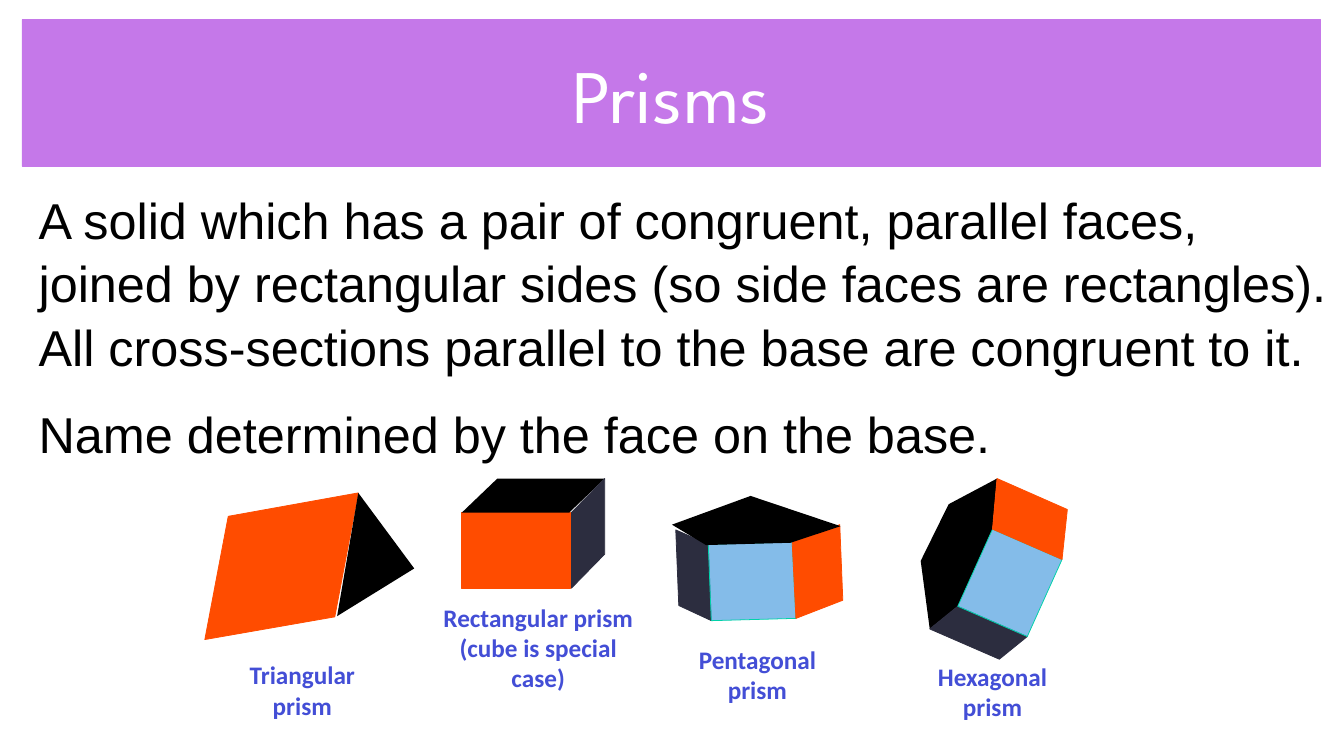
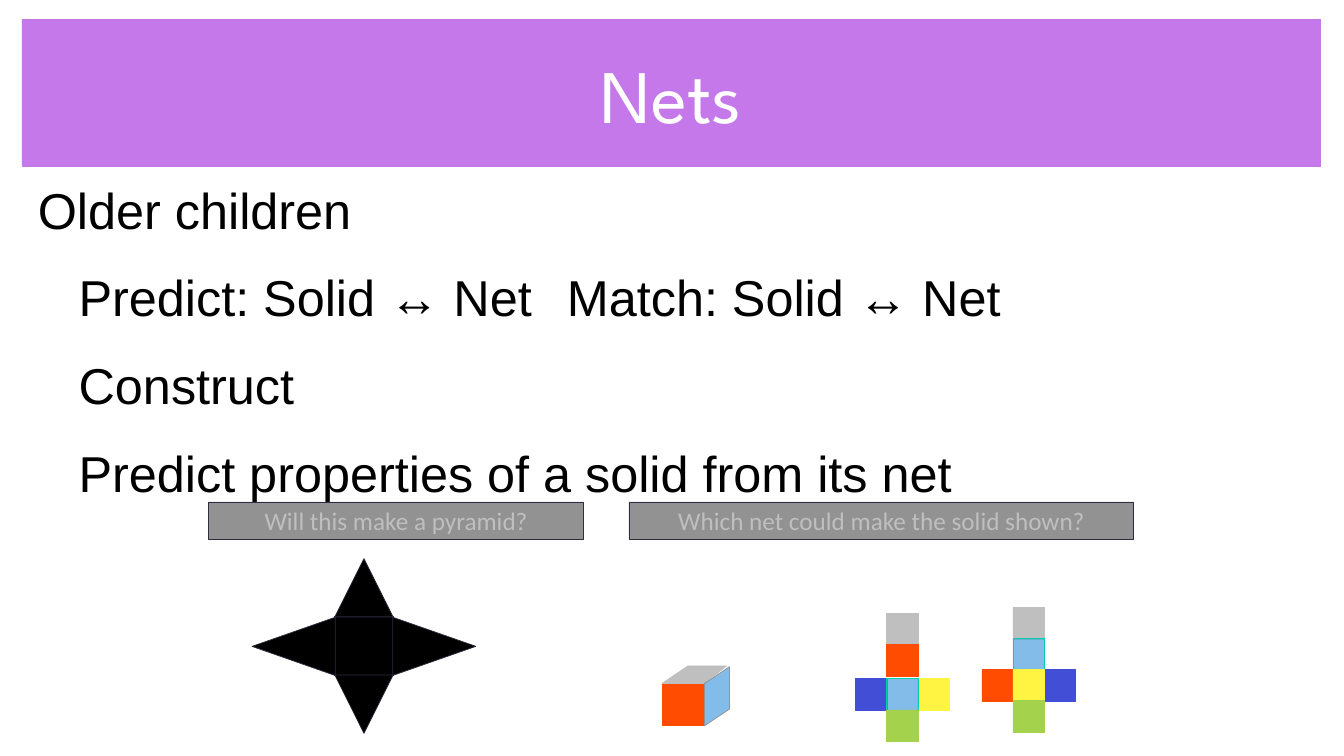
from math import cos, radians, sin

from lxml import etree
from pptx import Presentation
from pptx import util as u
from pptx.dml.color import RGBColor
from pptx.enum import shapes, text
from pptx.oxml.ns import qn

PX = 9144  # EMU in one px, 100 px to the inch
INK = {
    "white": "FFFFFF", "black": "000000", "violet": "C578E9",
    "orange": "FF4C00", "slate": "2C2D3F", "sky": "50A0E1",
    "mint": "00D2A9", "blue": "434ED6", "gray": "929292",
    "silver": "BFBFBF", "yellow": "FFF442", "green": "A4D24D",
}
EDGE = {"sky": "mint", "black": None}  # other fills have an edge of their own colour
CLEAR = {"sky": 70}  # opacity in percent
RECT = shapes.MSO_SHAPE.RECTANGLE
CONE = shapes.MSO_SHAPE.ISOSCELES_TRIANGLE

# Each prism: label, label place, faces from back to front
PRISMS = [
    ("Triangular prism", (287, 868, 226, 89), [
        ("orange", [(302, 683), (271, 846), (443, 816), (474, 652)]),
        ("black", [(474, 652), (446, 815), (548, 752)]),
    ]),
    ("Rectangular prism (cube is special case)", (567, 792, 290, 129), [
        ("orange", [(611, 678), (611, 778), (755, 778), (755, 678)]),
        ("black", [(658, 633), (611, 678), (753, 678), (800, 633)]),
        ("slate", [(756, 678), (756, 778), (800, 733), (800, 633)]),
    ]),
    ("Pentagonal prism", (889, 848, 226, 89), [
        ("slate", [(894, 701), (937, 720), (941, 821), (898, 801)]),
        ("sky", [(937, 720), (1048, 717), (1053, 818), (941, 821)]),
        ("orange", [(1048, 717), (1111, 694), (1115, 794), (1053, 818)]),
        ("black", [(889, 694), (934, 721), (1046, 718), (1112, 696), (993, 656)]),
    ]),
    ("Hexagonal prism", (1200, 870, 226, 89), [
        ("black", [(1230, 832), (1218, 742), (1255, 667), (1319, 633),
                   (1313, 700), (1267, 802)]),
        ("slate", [(1230, 832), (1267, 802), (1359, 842), (1322, 872)]),
        ("sky", [(1267, 802), (1313, 700), (1405, 740), (1359, 842)]),
        ("orange", [(1313, 700), (1319, 633), (1412, 674), (1405, 740)]),
    ]),
]


def rgb(name):
    return RGBColor.from_string(INK[name])


def place(shape, x, y, w, h):
    shape.left, shape.top, shape.width, shape.height = (
        u.Emu(n * PX) for n in (x, y, w, h))


def paint(shape, fill, edge=None):
    shape.shadow.inherit = False
    shape.fill.solid()
    shape.fill.fore_color.rgb = rgb(fill)
    if fill in CLEAR:
        tint = shape._element.spPr.find(".//" + qn("a:srgbClr"))
        etree.SubElement(tint, qn("a:alpha"), val=str(CLEAR[fill] * 1000))
    edge = edge or EDGE.get(fill, fill)
    if edge:
        shape.line.color.rgb = rgb(edge)
        shape.line.width = u.Pt(0.75)
    else:
        shape.line.fill.background()
    return shape


def box(slide, x, y, w, h, fill, edge=None, form=RECT):
    shape = slide.shapes.add_shape(form, *(u.Emu(n * PX) for n in (x, y, w, h)))
    return paint(shape, fill, edge)


def face(slide, points, fill, edge=None):
    """Draw a closed outline through the points."""
    pen = slide.shapes.build_freeform(*points[0], scale=PX)
    pen.add_line_segments(points[1:], close=True)
    return paint(pen.convert_to_shape(), fill, edge)


def frame(shape):
    """Give a shape's text the shared margins, wrap and anchor."""
    tf = shape.text_frame
    tf.auto_size = text.MSO_AUTO_SIZE.NONE
    tf.word_wrap = True
    tf.vertical_anchor = text.MSO_ANCHOR.MIDDLE
    tf.margin_left = tf.margin_right = u.Emu(4 * PX)
    tf.margin_top = tf.margin_bottom = u.Emu(4 * PX)
    return tf


def area(slide, x, y, w, h):
    return frame(slide.shapes.add_textbox(*(u.Emu(n * PX) for n in (x, y, w, h))))


def write(tf, words, size=24, font="Calibri", ink="black", bold=False,
          mid=True, gap=0, lead=1.0, indent=0, tab=0):
    """Add one paragraph, or fill the first when the frame is empty."""
    para = tf.add_paragraph() if tf.text else tf.paragraphs[0]
    para.alignment = text.PP_ALIGN.CENTER if mid else text.PP_ALIGN.LEFT
    para.line_spacing = lead
    para.space_before = u.Pt(gap)
    props = para._p.get_or_add_pPr()
    props.set("marL", "0")
    props.set("indent", str(indent * PX))
    if tab:
        stops = etree.SubElement(props, qn("a:tabLst"))
        etree.SubElement(stops, qn("a:tab"), pos=str(tab * PX), algn="l")
    run = para.add_run()
    run.text = words
    run.font.size = u.Pt(size)
    run.font.name = font
    run.font.bold = bold
    run.font.color.rgb = rgb(ink)


def body(tf, words, **style):
    write(tf, words, size=48, font="Arial", mid=False, gap=23, **style)


def start(deck, title):
    """Add a slide with the title band."""
    slide = deck.slides.add_slide(deck.slide_layouts[5])
    band = slide.shapes.title
    place(band, 29, 26, 1718, 194)
    paint(band, "violet")
    write(frame(band), title, size=72, font="League Spartan", ink="white")
    return slide


def ask(slide, x, w, words):
    bar = box(slide, x, 664, w, 50, "gray", "slate")
    write(frame(bar), words, ink="silver")


def star(slide, x, y, side):
    """Draw a square base with a triangle on each side."""
    box(slide, x, y, side, side, "black", "slate")
    for turn, tall in ((0, 77), (90, 110), (180, 77), (270, 110)):
        reach = (side + tall) / 2
        left = x + reach * sin(radians(turn))
        top = y + (side - tall) / 2 - reach * cos(radians(turn))
        flap = box(slide, round(left), round(top), side, tall, "black", "slate", CONE)
        flap.rotation = turn


def net(slide, x, y, inks, gap=0):
    """Draw a cube net: two squares, a gap, a row of three, one square."""
    step, side = 41, 42
    cells = ((0, 0), (0, 1), (-1, 2), (1, 2), (0, 2), (0, 3))
    for (col, row), ink in zip(cells, inks):
        drop = gap if row > 1 else 0
        box(slide, x + col * step, y + row * step + drop, side, side, ink)


def cube(slide):
    box(slide, 876, 904, 56, 56, "orange")
    face(slide, [(876, 904), (932, 904), (961, 881), (910, 881)], "silver")
    face(slide, [(932, 960), (965, 938), (965, 882), (932, 904)], "sky", "gray")


def prisms(deck):
    slide = start(deck, "Prisms")
    tf = area(slide, 47, 235, 1718, 389)
    body(tf, "A solid which has a pair of congruent, parallel faces, joined by "
             "rectangular sides (so side faces are rectangles). All "
             "cross-sections parallel to the base are congruent to it.", lead=1.05)
    body(tf, "Name determined by the face on the base.", lead=1.05)
    for label, spot, faces in PRISMS:
        for ink, points in faces:
            face(slide, points, ink)
        write(area(slide, *spot), label, ink="blue", bold=True)


def nets(deck):
    slide = start(deck, "Nets")
    tf = area(slide, 46, 197, 1686, 503)
    body(tf, "Older children", lead=1.05)
    for words in ("Predict: Solid ↔ Net\tMatch: Solid ↔ Net", "Construct",
                  "Predict properties of a solid from its net"):
        body(tf, words, lead=1.05, indent=54, tab=945 if "\t" in words else 0)
    ask(slide, 276, 496, "Will this make a pyramid?")
    star(slide, 443, 816, 77)
    ask(slide, 832, 668, "Which net could make the solid shown?")
    net(slide, 1340, 804, ("silver", "sky", "orange", "blue", "yellow", "green"))
    net(slide, 1173, 812, ("silver", "orange", "blue", "yellow", "sky", "green"), gap=4)
    cube(slide)


def main():
    deck = Presentation()
    deck.slide_width, deck.slide_height = u.Emu(1778 * PX), u.Emu(1000 * PX)
    prisms(deck)
    nets(deck)
    deck.save("out.pptx")


if __name__ == "__main__":
    main()
